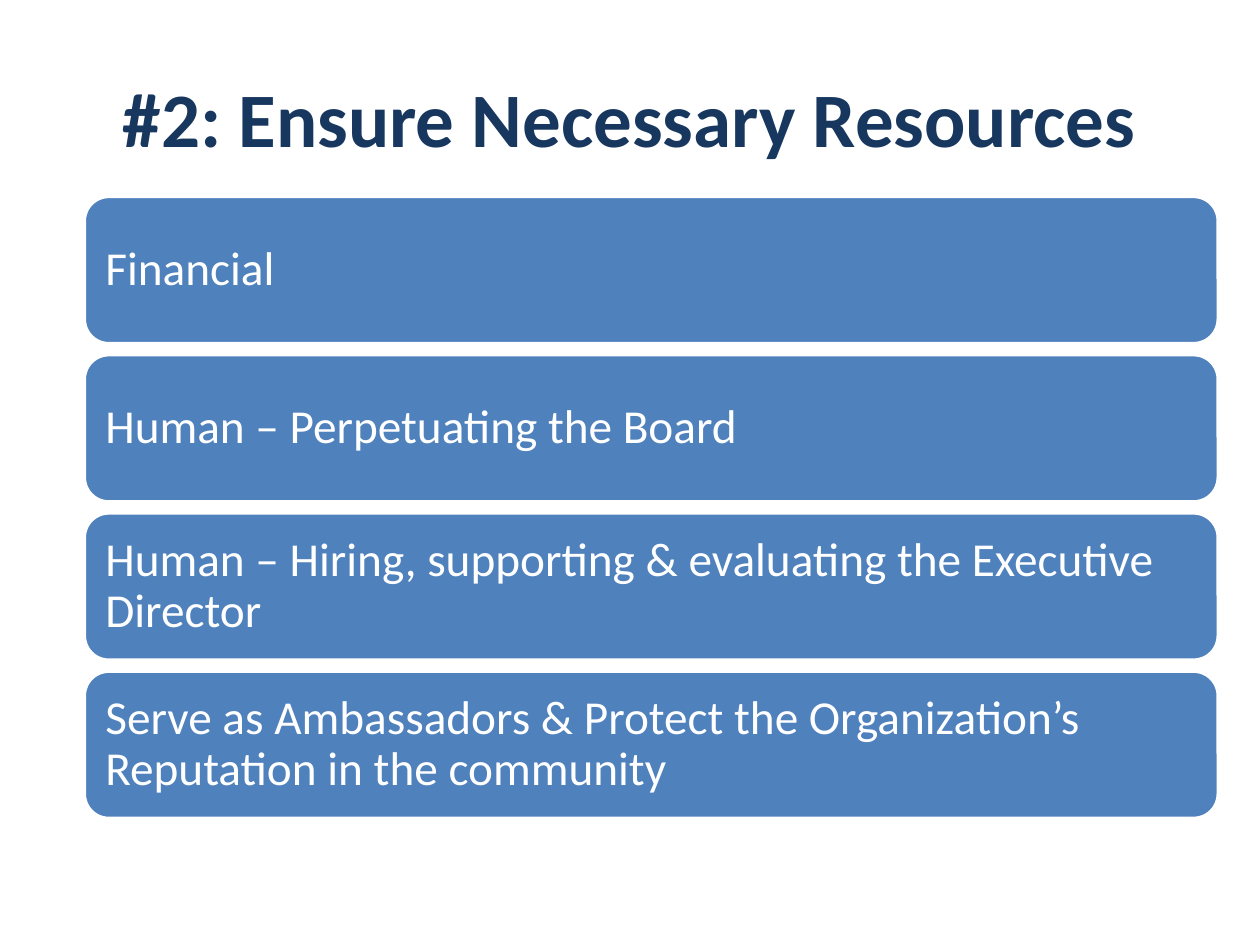
from pptx import Presentation
from pptx.dml.color import RGBColor
from pptx.enum.shapes import MSO_SHAPE
from pptx.enum.text import MSO_ANCHOR, PP_ALIGN
from pptx.util import Cm, Pt

HUES = {"navy": "17375E", "blue": "4F81BD", "white": "FFFFFF"}
ITEMS = [
    "Financial",
    "Human – Perpetuating the Board",
    "Human – Hiring, supporting & evaluating the Executive Director",
    "Serve as Ambassadors & Protect the Organization’s Reputation in the community",
]
LEFT, TOP, WIDTH, HEIGHT, STEP = 1.7, 3.96, 22.86, 2.97, 3.19


def hue(name):
    return RGBColor.from_string(HUES[name])


def apply(target, values):
    for name, value in values.items():
        setattr(target, name, value)


class Deck:
    """Hold the text style and the current slide."""

    def __init__(self, slide, face="Calibri"):
        self.slide = slide
        self.face = face

    def label(self, shape, text, color, frame, para, font):
        body = shape.text_frame
        apply(body, {"word_wrap": True, "vertical_anchor": MSO_ANCHOR.MIDDLE, **frame})
        line = body.paragraphs[0]
        apply(line, para)
        run = line.add_run()
        run.text = text
        apply(run.font, {"name": self.face, **font})
        run.font.color.rgb = hue(color)

    def title(self, text, *box):
        shape = self.slide.shapes.add_textbox(*map(Cm, box))
        self.label(shape, text, "navy", {}, {"alignment": PP_ALIGN.CENTER},
                   {"size": Pt(44), "bold": True})

    def bar(self, text, *box):
        shape = self.slide.shapes.add_shape(MSO_SHAPE.ROUNDED_RECTANGLE, *map(Cm, box))
        shape.shadow.inherit = False
        shape.fill.solid()
        shape.fill.fore_color.rgb = hue("blue")
        shape.line.color.rgb = hue("white")
        shape.line.width = Pt(2)
        sides = ("left", "top", "right", "bottom")
        self.label(shape, text, "white",
                   {f"margin_{side}": Cm(0.28) for side in sides},
                   {"alignment": PP_ALIGN.LEFT, "line_spacing": 0.9},
                   {"size": Pt(27)})


def main():
    show = Presentation()
    apply(show, {"slide_width": Cm(25.4), "slide_height": Cm(19.05)})
    deck = Deck(show.slides.add_slide(show.slide_layouts[6]))
    deck.title("#2: Ensure Necessary Resources", 1.27, 0.76, 22.86, 3.18)
    for row, text in enumerate(ITEMS):
        deck.bar(text, LEFT, TOP + row * STEP, WIDTH, HEIGHT)
    show.save("out.pptx")


if __name__ == "__main__":
    main()
